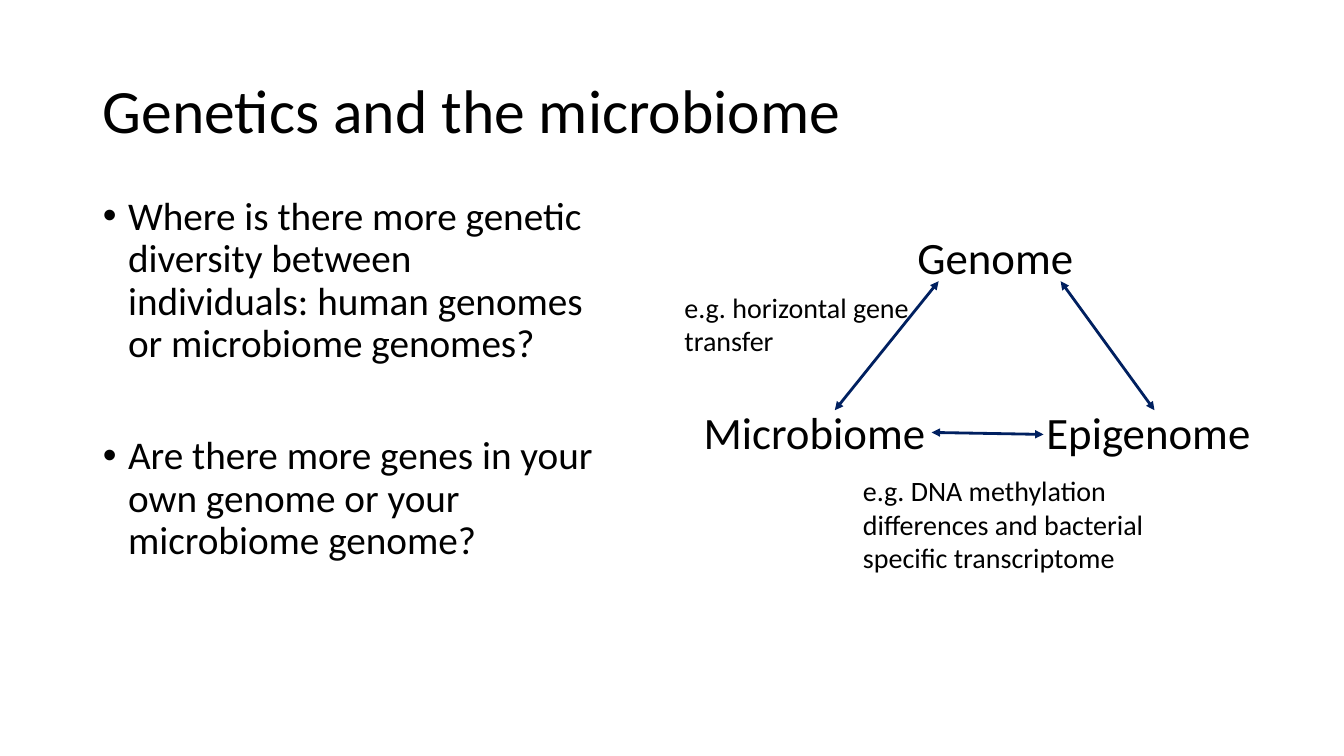
from lxml import etree
from pptx import Presentation
from pptx.dml.color import RGBColor
from pptx.enum.shapes import MSO_CONNECTOR
from pptx.enum.text import MSO_ANCHOR, MSO_AUTO_SIZE, PP_ALIGN
from pptx.oxml.ns import qn
from pptx.util import Inches, Pt

LEFT = PP_ALIGN.LEFT
TOP, MIDDLE = MSO_ANCHOR.TOP, MSO_ANCHOR.MIDDLE
NONE, GROW = MSO_AUTO_SIZE.NONE, MSO_AUTO_SIZE.SHAPE_TO_FIT_TEXT
STRAIGHT = MSO_CONNECTOR.STRAIGHT

TITLE = "Genetics and the microbiome"
ASKS = [
    "Where is there more genetic diversity between individuals: "
    "human genomes or microbiome genomes?",
    "Are there more genes in your own genome or your microbiome genome?",
]
LABELS = [
    ("Genome", 32, (9, 2.23, 2.17, 0.64)),
    ("Microbiome", 32, (6.88, 3.97, 2.43, 0.64)),
    ("Epigenome", 32, (10.28, 3.97, 2.53, 0.64)),
    ("e.g. horizontal gene transfer", 20, (6.69, 2.83, 2.43, 0.77)),
    ("e.g. DNA methylation differences and bacterial specific transcriptome",
     20, (8.46, 4.65, 3.85, 1.11)),
]
ARROWS = [
    (8.28, 4.07, 9.31, 2.79),
    (11.45, 4.07, 10.52, 2.79),
    (9.24, 4.29, 10.35, 4.31),
]
INK, NAVY = "000000", "002060"


def tint(code):
    return RGBColor.from_string(code)


def style(item, values):
    for name, value in values.items():
        setattr(item, name, value)


def place(shape, box):
    names = ("left", "top", "width", "height")
    style(shape, dict(zip(names, map(Inches, box))))


def write(shape, lines, size, frame, para):
    text = shape.text_frame
    style(text, {"word_wrap": True, **frame})
    text.text = "\n".join(lines)
    for item in text.paragraphs:
        style(item, {"alignment": LEFT, **para})
        style(item.font, {"name": "Calibri", "size": Pt(size)})
        for run in item.runs:
            style(run.font, {"name": "Calibri", "size": Pt(size)})
            run.font.color.rgb = tint(INK)
    return text.paragraphs


def arrow(slide, ends):
    line = slide.shapes.add_connector(STRAIGHT, *map(Inches, ends))
    line.line.color.rgb = tint(NAVY)
    line.line.width = Pt(2)
    stroke = line.line._get_or_add_ln()
    for tip in ("a:headEnd", "a:tailEnd"):
        etree.SubElement(stroke, qn(tip), type="triangle")
    etree.SubElement(line._element.spPr, qn("a:effectLst"))


def main():
    deck = Presentation()
    style(deck, {"slide_width": Inches(13.33), "slide_height": Inches(7.5)})
    slide = deck.slides.add_slide(deck.slide_layouts[1])

    title = slide.shapes.title
    place(title, (0.92, 0.4, 11.5, 1.45))
    write(title, [TITLE], 44, {"vertical_anchor": MIDDLE, "auto_size": NONE},
          {"line_spacing": 0.9})

    body = slide.placeholders[1]
    place(body, (0.92, 1.9, 5.12, 4.76))
    asks = write(body, ASKS, 28, {"vertical_anchor": TOP, "auto_size": NONE},
                 {"line_spacing": 0.9, "space_before": Pt(10)})
    asks[1].space_before = Pt(50)
    for ask in asks:
        props = ask._p.get_or_add_pPr()
        props.set("marL", str(Inches(0.25)))
        props.set("indent", str(Inches(-0.25)))
        etree.SubElement(props, qn("a:buFont"), typeface="Arial")
        etree.SubElement(props, qn("a:buChar"), char="•")
        props.append(props.find(qn("a:defRPr")))

    for words, size, box in LABELS:
        label = slide.shapes.add_textbox(*map(Inches, box))
        write(label, [words], size, {"auto_size": GROW}, {})
    for ends in ARROWS:
        arrow(slide, ends)

    deck.save("out.pptx")


if __name__ == "__main__":
    main()
